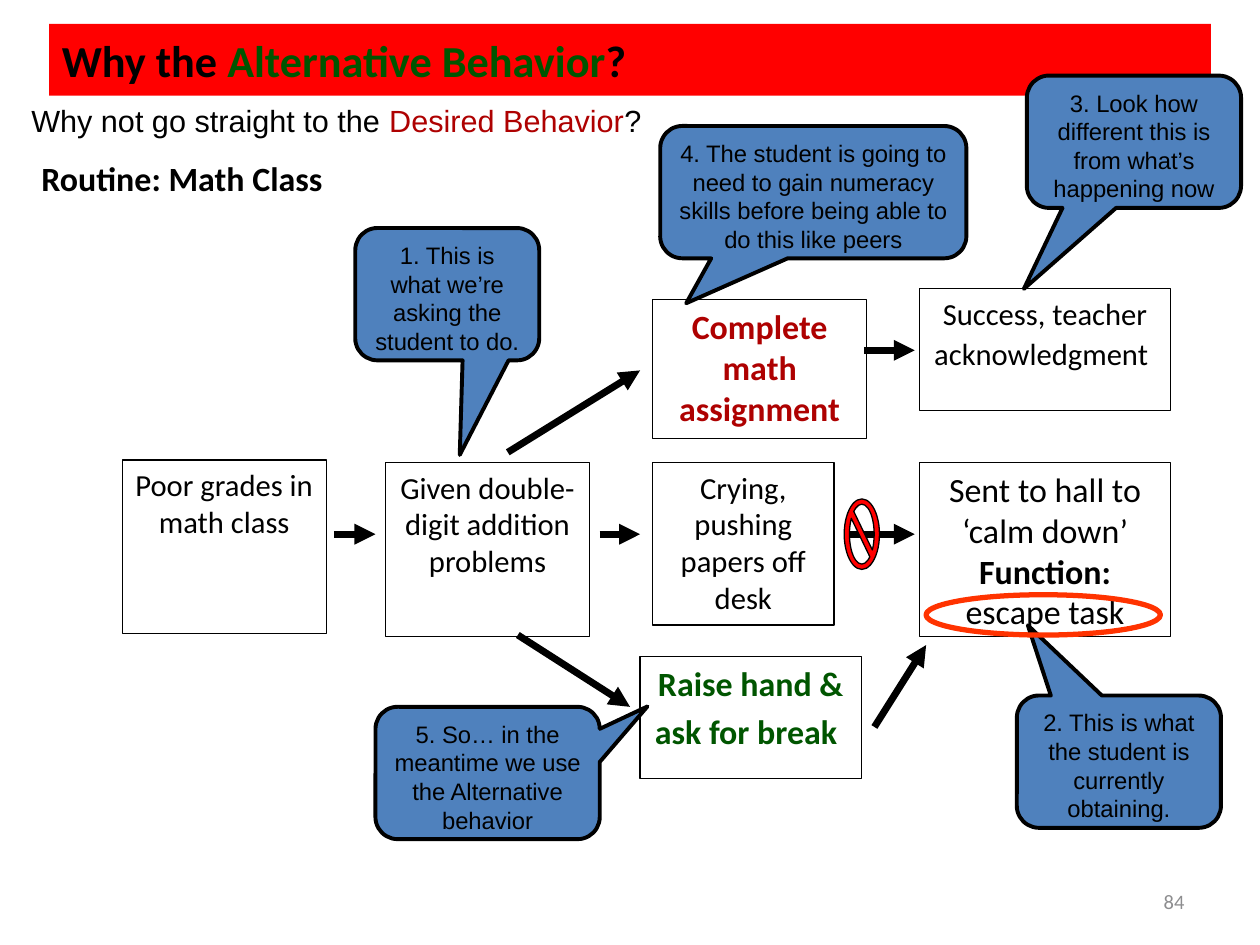
from lxml import etree
from pptx import Presentation
from pptx import util as u
from pptx.dml import color
from pptx.enum import shapes, text
from pptx.oxml import ns

COLORS = {"black": "000000", "red": "FF0000", "green": "005500", "crimson": "AE0101",
          "blue": "4F81BD", "orange": "FF3300", "gray": "8D8D8F"}
ALIGN = text.PP_ALIGN
ANCHOR = text.MSO_ANCHOR


def rgb(name):
    return color.RGBColor.from_string(COLORS[name])


def write(shape, runs, size, font="Calibri", bold=False, align=ALIGN.CENTER, anchor=ANCHOR.TOP):
    frame = shape.text_frame
    frame.word_wrap = True
    frame.auto_size = text.MSO_AUTO_SIZE.NONE
    frame.vertical_anchor = anchor
    paragraph = frame.paragraphs[0]
    paragraph.alignment = align
    paragraph.space_before = u.Pt(0)
    for words, changes in runs:
        run = paragraph.add_run()
        run.text = words
        run.font.name = font
        run.font.size = u.Pt(changes.get("size", size))
        run.font.bold = changes.get("bold", bold)
        run.font.color.rgb = rgb(changes.get("color", "black"))


presentation = Presentation()
presentation.slide_width, presentation.slide_height = u.Inches(10), u.Inches(7.5)
slide = presentation.slides.add_slide(presentation.slide_layouts[5])

title = slide.shapes.title
title.left, title.top = u.Inches(0.39), u.Inches(0.19)
title.width, title.height = u.Inches(9.22), u.Inches(0.57)
title.fill.solid()
title.fill.fore_color.rgb = rgb("red")
write(title, [("Why the ", {}), ("Alternative Behavior", {"color": "green"}), ("?", {}),
              (" ", {"size": 19.2})], 25.3, bold=True, align=ALIGN.LEFT, anchor=ANCHOR.MIDDLE)

boxes = [
    (7.3, 2.29, 1.99, 0.97, 17.5, [("Success, teacher acknowledgment", {}), (" ", {"size": 19.4})]),
    (7.3, 3.67, 1.99, 1.38, 19.4, [("Sent to hall to ‘calm down’ ", {}),
                                   ("Function:", {"bold": True}), (" escape task", {})]),
    (5.18, 2.38, 1.7, 1.1, 19.4, [("Complete math assignment", {"color": "crimson", "bold": True})]),
    (5.18, 3.67, 1.44, 1.29, 17.5, [("Crying, pushing papers off desk", {})]),
    (5.08, 5.21, 1.76, 0.97, 19.4, [("Raise hand & ask for break", {"color": "green", "bold": True}),
                                    (" ", {"size": 23.3})]),
    (3.06, 3.67, 1.62, 1.38, 17.5, [("Given double-digit addition problems", {})]),
    (0.97, 3.65, 1.62, 1.38, 17.5, [("Poor grades in math class", {})]),
]
for left, top, width, height, size, runs in boxes:
    box = slide.shapes.add_shape(shapes.MSO_SHAPE.RECTANGLE, u.Inches(left), u.Inches(top),
                                 u.Inches(width), u.Inches(height))
    box.shadow.inherit = False
    box.fill.background()
    box.line.color.rgb = rgb("black")
    box.line.width = u.Pt(0.75)
    write(box, runs, size)

labels = [
    (0.23, 1.2, 3.48, 0.43, [("Routine: Math Class", {})], {"size": 19.4, "bold": True, "align": ALIGN.LEFT}),
    (0.15, 0.76, 9.71, 0.4, [("Why not go straight to the ", {}),
                             ("Desired Behavior", {"color": "crimson"}), ("?", {})],
     {"size": 17.5, "font": "Arial", "align": ALIGN.LEFT}),
    (7.17, 6.95, 2.33, 0.4, [("84", {"color": "gray"})],
     {"size": 11.7, "align": ALIGN.RIGHT, "anchor": ANCHOR.MIDDLE}),
]
for left, top, width, height, runs, style in labels:
    label = slide.shapes.add_textbox(u.Inches(left), u.Inches(top), u.Inches(width), u.Inches(height))
    write(label, runs, **style)

arrows = [
    (2.65, 4.24, 2.98, 4.24),
    (4.76, 4.24, 5.08, 4.24),
    (6.7, 4.24, 7.26, 4.24),
    (6.86, 2.78, 7.26, 2.78),
    (6.94, 5.77, 7.35, 5.12),
    (4.11, 5.04, 5, 5.61),
    (4.03, 3.59, 5.08, 2.94),
]
for ends in arrows:
    arrow = slide.shapes.add_connector(shapes.MSO_CONNECTOR.STRAIGHT, *map(u.Inches, ends))
    arrow.line.color.rgb = rgb("black")
    arrow.line.width = u.Pt(4)
    etree.SubElement(arrow.line._get_or_add_ln(), ns.qn("a:tailEnd"), type="triangle")
    etree.SubElement(arrow._element.spPr, ns.qn("a:effectLst"))

callouts = [
    (2.82, 1.81, 1.46, 0.068, 1.215, "1. This is what we’re asking the student to do."),
    (8.07, 5.52, 1.62, -0.446, -1.031, "2. This is what the student is currently obtaining."),
    (8.15, 0.6, 1.7, -0.514, 1.112, "3. Look how different this is from what’s happening now"),
    (5.24, 1, 2.43, -0.415, 0.84,
     "4. The student is going to need to gain numeracy skills before being able to do this like peers"),
    (2.98, 5.61, 1.78, 0.713, -0.503, "5. So… in the meantime we use the Alternative behavior"),
]
for left, top, width, tip_x, tip_y, words in callouts:
    callout = slide.shapes.add_shape(shapes.MSO_SHAPE.ROUNDED_RECTANGULAR_CALLOUT, u.Inches(left),
                                     u.Inches(top), u.Inches(width), u.Inches(1.05))
    callout.adjustments[0], callout.adjustments[1] = tip_x, tip_y
    callout.shadow.inherit = False
    callout.fill.solid()
    callout.fill.fore_color.rgb = rgb("blue")
    callout.line.color.rgb = rgb("black")
    callout.line.width = u.Pt(2.25)
    write(callout, [(words, {})], 13.6, font="Arial")

stop_sign = slide.shapes.add_shape(shapes.MSO_SHAPE.NO_SYMBOL, u.Inches(6.7), u.Inches(3.96),
                                   u.Inches(0.28), u.Inches(0.56))
stop_sign.adjustments[0] = 0.15
stop_sign.shadow.inherit = False
stop_sign.fill.solid()
stop_sign.fill.fore_color.rgb = rgb("red")
stop_sign.line.color.rgb = rgb("black")
stop_sign.line.width = u.Pt(0.75)

highlight = slide.shapes.add_shape(shapes.MSO_SHAPE.OVAL, u.Inches(7.35), u.Inches(4.72),
                                   u.Inches(1.86), u.Inches(0.32))
highlight.shadow.inherit = False
highlight.fill.background()
highlight.line.color.rgb = rgb("orange")
highlight.line.width = u.Pt(3)

presentation.save("out.pptx")
